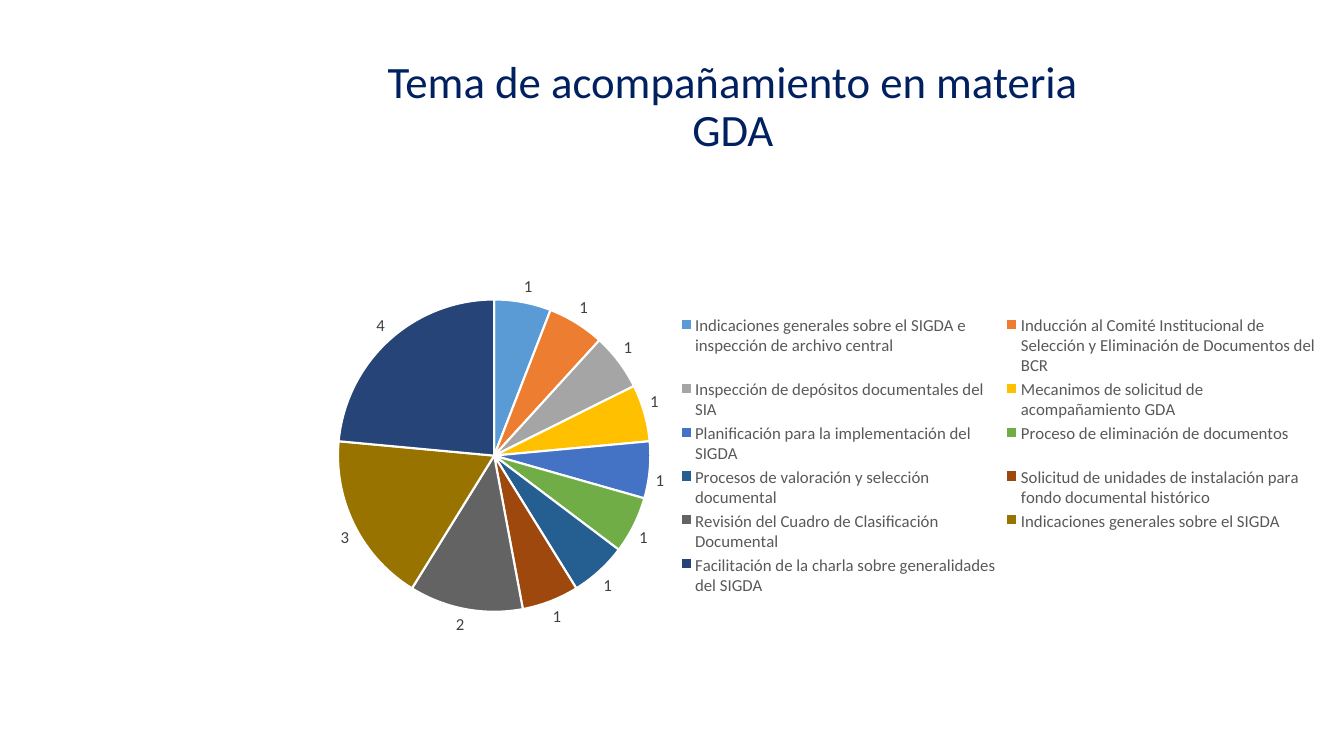
from dataclasses import dataclass

from lxml import etree
from pptx import Presentation
from pptx.chart.data import CategoryChartData
from pptx.dml.color import RGBColor
from pptx.enum.chart import XL_CHART_TYPE as ChartType
from pptx.enum.chart import XL_LABEL_POSITION as LabelPosition
from pptx.enum.chart import XL_LEGEND_POSITION as LegendPosition
from pptx.enum.text import MSO_ANCHOR as Anchor
from pptx.enum.text import PP_ALIGN as Align
from pptx.oxml.ns import qn
from pptx.util import Pt

PX = 9525  # 96 px to the inch


@dataclass(frozen=True)
class Theme:
    font: str = "Calibri"
    title_size: int = 32
    chart_size: int = 12
    title: str = "002060"
    label: str = "404040"
    legend: str = "595959"
    border: str = "FFFFFF"


THEME = Theme()

# Topic, number of sessions, slice colour
TOPICS = [
    ("Indicaciones generales sobre el SIGDA e inspección de archivo central", 1, "5B9BD5"),
    ("Inducción al Comité Institucional de Selección y Eliminación de Documentos del BCR",
     1, "ED7D31"),
    ("Inspección de depósitos documentales del SIA", 1, "A5A5A5"),
    ("Mecanimos de solicitud de acompañamiento GDA", 1, "FFC000"),
    ("Planificación para la implementación del SIGDA", 1, "4472C4"),
    ("Proceso de eliminación de documentos", 1, "70AD47"),
    ("Procesos de valoración y selección documental", 1, "255E91"),
    ("Solicitud de unidades de instalación para fondo documental histórico", 1, "9E480E"),
    ("Revisión del Cuadro de Clasificación Documental", 2, "636363"),
    ("Indicaciones generales sobre el SIGDA", 3, "997300"),
    ("Facilitación de la charla sobre generalidades del SIGDA", 4, "264478"),
]


def to_emu(box):
    return [length * PX for length in box]


def format_font(font, size, color):
    font.name = THEME.font
    font.size = Pt(size)
    font.color.rgb = RGBColor.from_string(color)


def add_text(slide, box, text, *, size, color, align, anchor, line_spacing):
    frame = slide.shapes.add_textbox(*to_emu(box)).text_frame
    frame.word_wrap = True
    frame.vertical_anchor = anchor
    paragraph = frame.paragraphs[0]
    paragraph.text = text
    paragraph.alignment = align
    paragraph.line_spacing = line_spacing
    format_font(paragraph.font, size, color)


def place_plot(chart, x, y, w, h):
    """Set the plot's place as fractions of the chart area."""
    plot_area = chart.element.find(".//" + qn("c:plotArea"))
    for old_layout in plot_area.findall(qn("c:layout")):
        plot_area.remove(old_layout)
    layout = etree.Element(qn("c:layout"))
    manual = etree.SubElement(layout, qn("c:manualLayout"))
    settings = {"layoutTarget": "inner", "xMode": "edge", "yMode": "edge",
                "x": x, "y": y, "w": w, "h": h}
    for name, value in settings.items():
        etree.SubElement(manual, qn(f"c:{name}")).set("val", str(value))
    plot_area.insert(0, layout)


def add_topic_pie(slide, box):
    data = CategoryChartData()
    data.categories = [topic for topic, _, _ in TOPICS]
    data.add_series("Series 1", [count for _, count, _ in TOPICS])
    chart = slide.shapes.add_chart(ChartType.PIE, *to_emu(box), data).chart
    chart.has_title = False
    format_font(chart.font, THEME.chart_size, THEME.label)
    place_plot(chart, 0.02, 0.24, 0.31, 0.52)

    # Slices
    plot = chart.plots[0]
    plot.vary_by_categories = True
    for index, (_, _, color) in enumerate(TOPICS):
        slice_format = plot.series[0].points[index].format
        slice_format.fill.solid()
        slice_format.fill.fore_color.rgb = RGBColor.from_string(color)
        slice_format.line.color.rgb = RGBColor.from_string(THEME.border)
        slice_format.line.width = Pt(1.5)

    # Value labels
    labels = plot.series[0].data_labels
    labels.show_value = True
    labels.show_percentage = False
    labels.position = LabelPosition.OUTSIDE_END
    format_font(labels.font, THEME.chart_size, THEME.label)

    # Legend
    chart.has_legend = True
    legend = chart.legend
    legend.position = LegendPosition.RIGHT
    legend.include_in_layout = False
    format_font(legend.font, THEME.chart_size, THEME.legend)


def build_topic_slide(presentation):
    slide = presentation.slides.add_slide(presentation.slide_layouts[6])
    add_topic_pie(slide, (302, 148, 964, 572))
    add_text(slide, (345, 44, 706, 118), "Tema de acompañamiento en materia GDA",
             size=THEME.title_size, color=THEME.title, align=Align.CENTER,
             anchor=Anchor.MIDDLE, line_spacing=0.9)


def main():
    presentation = Presentation()
    presentation.slide_width, presentation.slide_height = to_emu((1280, 720))
    build_topic_slide(presentation)
    presentation.save("out.pptx")


if __name__ == "__main__":
    main()
